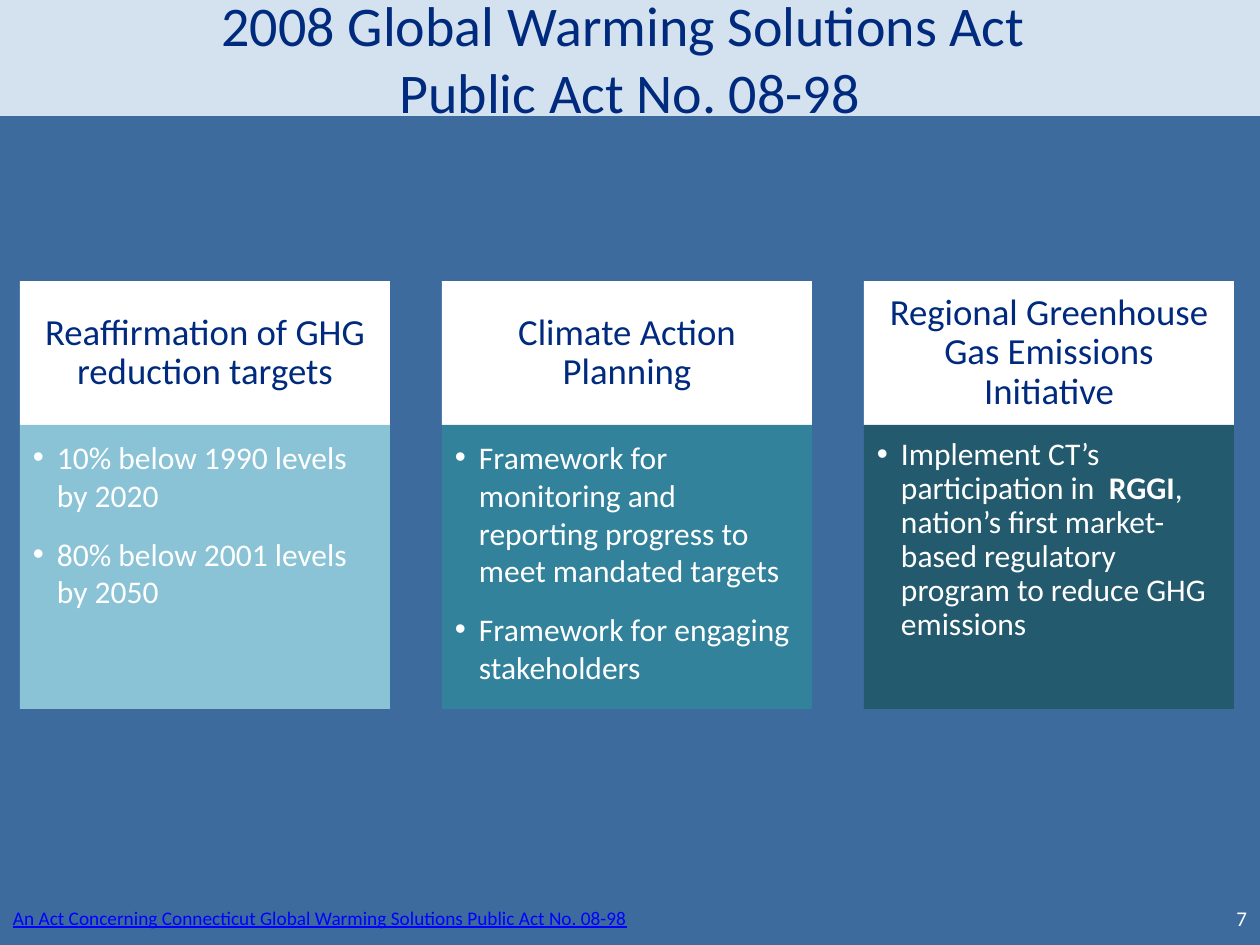
from lxml import etree
from pptx import Presentation
from pptx import util as u
from pptx.dml.color import RGBColor
from pptx.enum import shapes, text
from pptx.oxml.ns import qn

PX = 914400 / 126
NAVY, WHITE = "002A7E", "FFFFFF"
COLUMN_LEFT, COLUMN_PITCH, COLUMN_WIDTH = 20, 422, 370
HEADER_TOP, HEADER_HEIGHT, BODY_HEIGHT = 281, 144, 284

COLUMNS = [
    ("Reaffirmation of GHG reduction targets", "93CDDD", {}, [
        ["10% below 1990 levels by 2020"],
        ["80% below 2001 levels by 2050"],
    ]),
    ("Climate Action Planning", "31859C", {}, [
        ["Framework for monitoring and reporting progress to meet mandated targets"],
        ["Framework for engaging stakeholders"],
    ]),
    ("Regional Greenhouse Gas Emissions Initiative", "215968",
     {"spacing": 0.9, "after": 3}, [
        ["Implement CT’s participation in  ", "RGGI",
         ", nation’s first market-based regulatory program to reduce GHG emissions"],
    ]),
]
BOLD_TERMS = {"RGGI"}


def px(length):
    return u.Emu(round(length * PX))


def color(value):
    return RGBColor.from_string(value)


def add_panel(page, left, top, width, height, fill, opacity=100):
    box = page.shapes.add_shape(shapes.MSO_SHAPE.RECTANGLE,
                                px(left), px(top), px(width), px(height))
    box.shadow.inherit = False
    box.fill.solid()
    box.fill.fore_color.rgb = color(fill)
    box.line.fill.background()
    if opacity < 100:
        tint = box.fill._xPr.find(qn("a:solidFill"))[0]
        etree.SubElement(tint, qn("a:alpha"), val=str(opacity * 1000))
    return box


def add_textbox(page, left, top, width, height):
    return page.shapes.add_textbox(px(left), px(top), px(width), px(height))


def add_bullet(para, indent):
    props = para._p.get_or_add_pPr()
    props.set("marL", str(px(indent)))
    props.set("indent", str(-px(indent)))
    etree.SubElement(props, qn("a:buFont"), typeface="Arial")
    etree.SubElement(props, qn("a:buChar"), char="•")


def write(box, paragraphs, size, ink=WHITE, align=text.PP_ALIGN.LEFT,
          anchor=text.MSO_ANCHOR.TOP, insets=(13, 6, 13, 6), spacing=None,
          after=0, bullet_indent=0, underline=None):
    """Fill a box with paragraphs, each a list of spans; "\\n" breaks the line."""
    frame = box.text_frame
    frame.word_wrap = True
    frame.vertical_anchor = anchor
    (frame.margin_left, frame.margin_top,
     frame.margin_right, frame.margin_bottom) = map(px, insets)
    for number, spans in enumerate(paragraphs):
        para = frame.add_paragraph() if number else frame.paragraphs[0]
        para.alignment = align
        para.space_after = u.Pt(after)
        if spacing:
            para.line_spacing = spacing
        if bullet_indent:
            add_bullet(para, bullet_indent)
        for words in spans:
            if words == "\n":
                para.add_line_break()
                continue
            span = para.add_run()
            span.text = words
            span.font.name = "Calibri"
            span.font.size = u.Pt(size)
            span.font.color.rgb = color(ink)
            span.font.bold = words in BOLD_TERMS
            span.font.underline = underline


def add_column(page, left, heading, fill, body_format, points):
    header = add_panel(page, left, HEADER_TOP, COLUMN_WIDTH, HEADER_HEIGHT, WHITE)
    write(header, [[heading]], 21, ink=NAVY, align=text.PP_ALIGN.CENTER,
          anchor=text.MSO_ANCHOR.MIDDLE, insets=(20, 11, 20, 11), spacing=0.9)
    body = add_panel(page, left, HEADER_TOP + HEADER_HEIGHT, COLUMN_WIDTH,
                     BODY_HEIGHT, fill, opacity=90)
    write(body, points, 18, insets=(13, 13, 18, 20), bullet_indent=24,
          **{"after": 12, **body_format})


def main():
    deck = Presentation()
    deck.slide_width, deck.slide_height = px(1260), px(945)
    page = deck.slides.add_slide(deck.slide_layouts[6])
    page.background.fill.solid()
    page.background.fill.fore_color.rgb = color("3D6B9D")

    for number, column in enumerate(COLUMNS):
        add_column(page, COLUMN_LEFT + number * COLUMN_PITCH, *column)

    citation = add_textbox(page, 0, 900, 799, 36)
    write(citation, [["An Act Concerning Connecticut Global Warming Solutions "
                      "Public Act No. 08-98"]], 11, ink="0000FF", underline=True)
    citation.text_frame.auto_size = text.MSO_AUTO_SIZE.SHAPE_TO_FIT_TEXT

    page_number = add_textbox(page, 1181, 900, 79, 50)
    write(page_number, [["7"]], 12, align=text.PP_ALIGN.RIGHT)

    title = add_panel(page, 0, 0, 1260, 116, "D4E1EE")
    write(title, [["2008 Global Warming Solutions Act ", "\n",
                   "Public Act No. 08-98"]], 32, ink=NAVY,
          align=text.PP_ALIGN.CENTER, anchor=text.MSO_ANCHOR.MIDDLE)

    deck.save("out.pptx")


if __name__ == "__main__":
    main()
